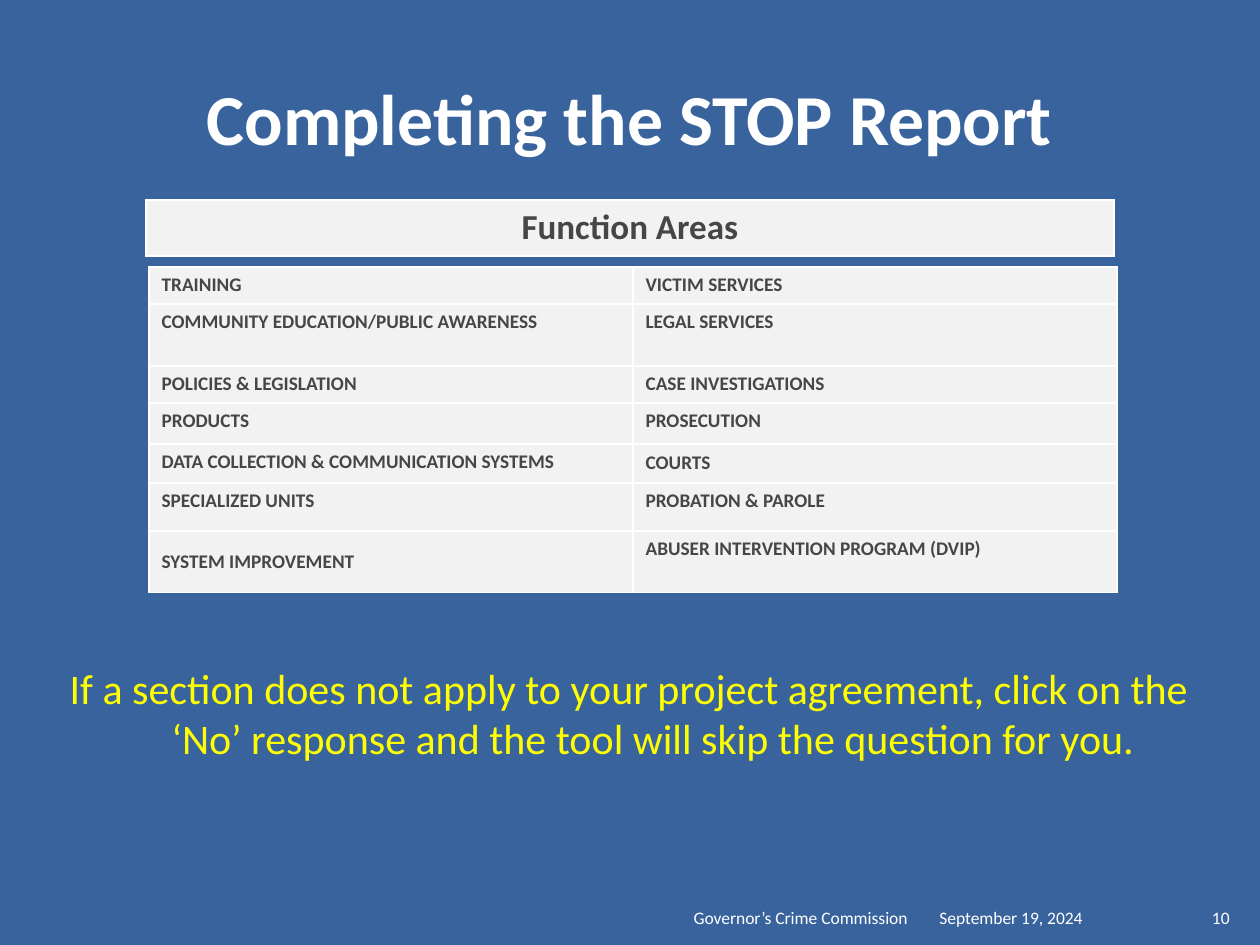
from dataclasses import dataclass

from lxml.etree import SubElement
from pptx import Presentation
from pptx.dml.color import RGBColor
from pptx.enum.text import MSO_ANCHOR as Anchor, PP_ALIGN as Align
from pptx.oxml.ns import qn
from pptx.util import Pt

EMU_PER_PX = 914400 / 126
FONT = "Calibri"
BLUE = RGBColor(0x39, 0x63, 0x9D)
WHITE = RGBColor(0xFF, 0xFF, 0xFF)
GRAY = RGBColor(0x46, 0x46, 0x46)
PALE = RGBColor(0xF2, 0xF2, 0xF2)
YELLOW = RGBColor(0xFF, 0xFF, 0x00)


@dataclass(frozen=True)
class Box:
    x: int
    y: int
    w: int
    h: int

    def emu(self) -> tuple[int, ...]:
        return tuple(px(v) for v in (self.x, self.y, self.w, self.h))


@dataclass(frozen=True)
class Area:
    left: str
    right: str
    height: int
    left_anchor: Anchor = Anchor.TOP
    right_anchor: Anchor = Anchor.TOP


@dataclass(frozen=True)
class Footer:
    text: str
    x: int
    w: int
    align: Align


AREAS = [
    Area("TRAINING", "VICTIM SERVICES", 37),
    Area("COMMUNITY EDUCATION/PUBLIC AWARENESS", "LEGAL SERVICES", 62),
    Area("POLICIES & LEGISLATION", "CASE INVESTIGATIONS", 37),
    Area("PRODUCTS", "PROSECUTION", 41),
    Area("DATA COLLECTION & COMMUNICATION SYSTEMS", "COURTS", 39,
         right_anchor=Anchor.MIDDLE),
    Area("SPECIALIZED UNITS", "PROBATION & PAROLE", 48),
    Area("SYSTEM IMPROVEMENT", "ABUSER INTERVENTION PROGRAM (DVIP)", 62,
         left_anchor=Anchor.MIDDLE),
]

FOOTERS = [
    Footer("September 19, 2024", 927, 265, Align.LEFT),
    Footer("Governor’s Crime Commission", 604, 316, Align.RIGHT),
    Footer("10", 1192, 50, Align.RIGHT),
]


def px(value: int) -> int:
    return round(value * EMU_PER_PX)


def write(tf, text: str, *, size: int, color: RGBColor, bold: bool = False,
          align: Align = Align.LEFT, hanging: int = 0) -> None:
    p = tf.paragraphs[0]
    p.alignment = align
    if hanging:
        pPr = p._p.get_or_add_pPr()
        pPr.set("marL", str(px(hanging)))
        pPr.set("indent", str(-px(hanging)))
    r = p.add_run()
    r.text = text
    r.font.name = FONT
    r.font.size = Pt(size)
    r.font.bold = bold
    r.font.color.rgb = color


def add_text(s, box: Box, text: str, *, anchor: Anchor = Anchor.TOP, **fmt) -> None:
    tf = s.shapes.add_textbox(*box.emu()).text_frame
    tf.word_wrap = True
    tf.vertical_anchor = anchor
    write(tf, text, **fmt)


def add_grid(s, box: Box, heights: list[int], columns: int):
    table = s.shapes.add_table(len(heights), columns, *box.emu()).table
    for row, height in zip(table.rows, heights):
        row.height = px(height)
    return table


def fill_cell(cell, text: str, *, anchor: Anchor = Anchor.TOP, **fmt) -> None:
    """Write one bold cell with a pale fill and thin white borders."""
    tcPr = cell._tc.get_or_add_tcPr()
    for side in ("lnL", "lnR", "lnT", "lnB"):
        ln = SubElement(tcPr, qn(f"a:{side}"), w=str(Pt(1)))
        fill = SubElement(ln, qn("a:solidFill"))
        SubElement(fill, qn("a:srgbClr"), val=str(WHITE))
    cell.fill.solid()
    cell.fill.fore_color.rgb = PALE
    cell.vertical_anchor = anchor
    write(cell.text_frame, text, color=GRAY, bold=True, **fmt)


def main() -> None:
    prs = Presentation()
    prs.slide_width, prs.slide_height = px(1260), px(945)
    s = prs.slides.add_slide(prs.slide_layouts[6])
    s.background.fill.solid()
    s.background.fill.fore_color.rgb = BLUE

    add_text(s, Box(63, 38, 1134, 158), "Completing the STOP Report",
             anchor=Anchor.MIDDLE, size=41, color=WHITE, bold=True, align=Align.CENTER)
    for f in FOOTERS:
        add_text(s, Box(f.x, 883, f.w, 51), f.text, anchor=Anchor.BOTTOM,
                 size=10, color=WHITE, align=f.align)

    heights = [area.height for area in AREAS]
    areas = add_grid(s, Box(149, 267, 968, sum(heights)), heights, 2)
    for i, area in enumerate(AREAS):
        fill_cell(areas.cell(i, 0), area.left, anchor=area.left_anchor, size=11)
        fill_cell(areas.cell(i, 1), area.right, anchor=area.right_anchor, size=11)

    heading = add_grid(s, Box(146, 200, 968, 56), [56], 1)
    fill_cell(heading.cell(0, 0), "Function Areas", size=20, align=Align.CENTER)

    add_text(s, Box(34, 656, 1190, 115),
             "If a section does not apply to your project agreement, click on the "
             "‘No’ response and the tool will skip the question for you.",
             size=24, color=YELLOW, align=Align.CENTER, hanging=48)
    prs.save("out.pptx")


if __name__ == "__main__":
    main()
